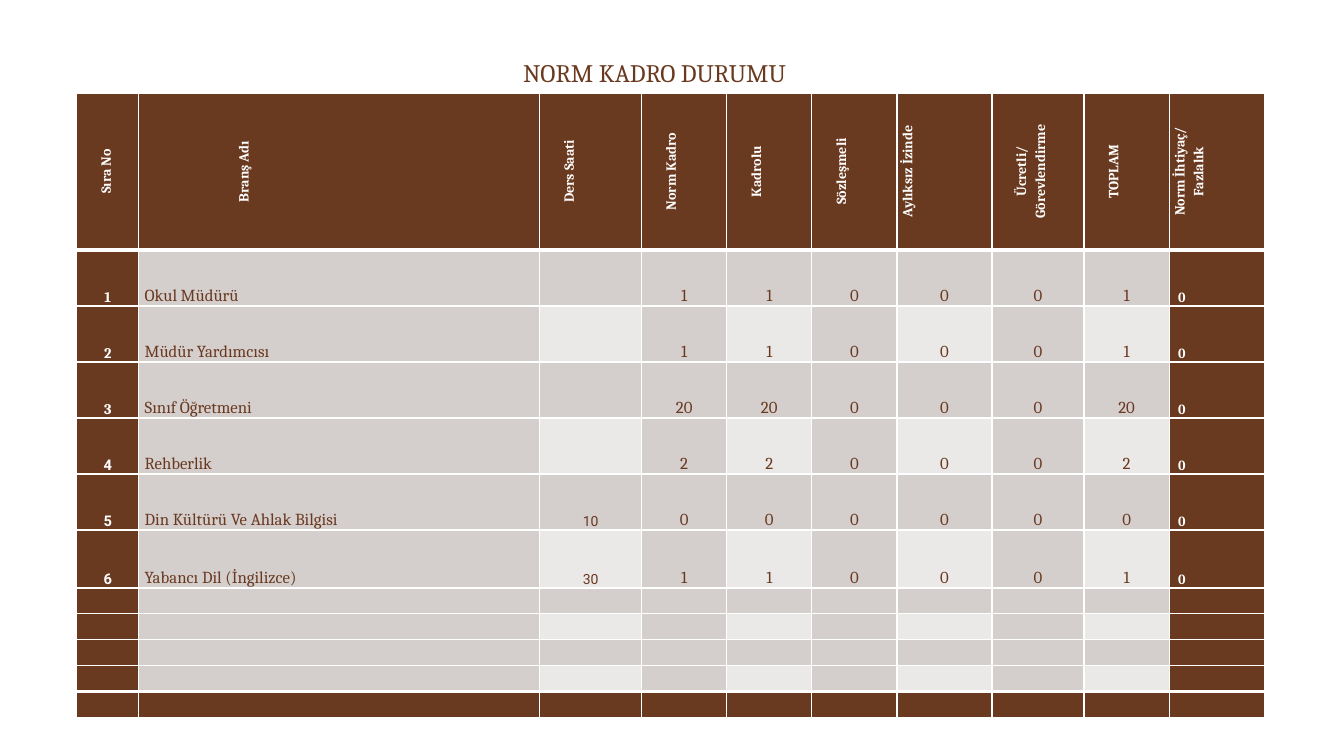
from lxml import etree
from pptx import Presentation
from pptx.dml.color import RGBColor
from pptx.enum.text import MSO_ANCHOR, PP_ALIGN
from pptx.oxml.ns import qn
from pptx.util import Pt

CENTER, LEFT = PP_ALIGN.CENTER, PP_ALIGN.LEFT
MIDDLE, BOTTOM = MSO_ANCHOR.MIDDLE, MSO_ANCHOR.BOTTOM
COLORS = {"brown": "6A3A20", "band": "D4CECD", "light": "EBE8E8", "white": "FFFFFF"}
SERIF, SANS = "Cambria", "Roboto"

COLUMN_WIDTHS = [44.3, 286.4, 72.9, 60.8, 60.8, 60.8, 67.9, 65.8, 60.8, 68.2]
ROW_HEIGHTS = [112.2] + [40] * 5 + [41.4] + [18.5] * 5
LAST_ROW, LAST_COLUMN = len(ROW_HEIGHTS) - 1, len(COLUMN_WIDTHS) - 1
HEADER_LINE = 13.5

# Heading lines and the height of the first line, which sets its distance from the edge
HEADINGS = [
    (["Sıra No"], 27),
    (["Branş Adı"], 81),
    (["Ders Saati"], 27),
    (["Norm Kadro"], 27),
    (["Kadrolu"], 27),
    (["Sözleşmeli"], 27),
    (["Aylıksız İzinde"], HEADER_LINE),
    (["Ücretli/", "Görevlendirme"], 27),
    (["TOPLAM"], 27),
    (["Norm İhtiyaç/", "Fazlalık"], HEADER_LINE),
]
BRANCHES = [
    (1, "Okul Müdürü", "", 1, 1, 0, 0, 0, 1, 0),
    (2, "Müdür Yardımcısı", "", 1, 1, 0, 0, 0, 1, 0),
    (3, "Sınıf Öğretmeni", "", 20, 20, 0, 0, 0, 20, 0),
    (4, "Rehberlik", "", 2, 2, 0, 0, 0, 2, 0),
    (5, "Din Kültürü Ve Ahlak Bilgisi", 10, 0, 0, 0, 0, 0, 0, 0),
    (6, "Yabancı Dil (İngilizce)", 30, 1, 1, 0, 0, 0, 1, 0),
]


def rgb(name):
    return RGBColor.from_string(COLORS[name])


def style(paragraph, size, color, bold=False, face=SERIF, align=LEFT, spacing=1.15):
    paragraph.alignment = align
    paragraph.line_spacing = spacing
    font = paragraph.font
    font.size, font.bold, font.name = Pt(size), bold, face
    font.color.rgb = rgb(color)


def set_borders(cell, row):
    widths = {
        "L": 1,
        "R": 1,
        "T": 3 if row in (1, LAST_ROW) else 1,
        "B": 3 if row in (0, LAST_ROW - 1) else 1,
    }
    properties = cell._tc.get_or_add_tcPr()
    for position, (side, width) in enumerate(widths.items()):
        line = etree.Element(qn(f"a:ln{side}"), w=str(Pt(width)))
        fill = etree.SubElement(line, qn("a:solidFill"))
        etree.SubElement(fill, qn("a:srgbClr"), val=COLORS["white"])
        properties.insert(position, line)


def fill_name(row, column):
    if row in (0, LAST_ROW) or column in (0, LAST_COLUMN):
        return "brown"
    return "light" if row % 2 == 0 and column in (2, 4, 6, 8) else "band"


def write_heading(cell, lines, first_line):
    cell.vertical_anchor = MIDDLE
    cell._tc.get_or_add_tcPr().set("vert", "vert270")
    frame = cell.text_frame
    frame.text = "\n".join(lines)
    for index, paragraph in enumerate(frame.paragraphs):
        height = HEADER_LINE if index else first_line
        style(paragraph, 10, "white", True, align=CENTER, spacing=Pt(height))


def write_value(cell, column, number, value):
    cell.text = str(value)
    paragraph = cell.text_frame.paragraphs[0]
    if value == "":
        etree.SubElement(paragraph._p, qn("a:endParaRPr"), sz="1000")
    elif column == 0:
        style(paragraph, 10.5, "white", True, SANS if number > 3 else SERIF, CENTER)
    elif column == 2:
        style(paragraph, 10, "brown", face=SANS, align=CENTER)
    elif column == LAST_COLUMN:
        cell.margin_left = Pt(6.5)
        style(paragraph, 10, "white", True)
    else:
        style(paragraph, 12, "brown", align=LEFT if column == 1 else CENTER)


def add_title(slide, left, top, width, height):
    title = slide.shapes.add_textbox(Pt(left), Pt(top), Pt(width), Pt(height)).text_frame
    title.word_wrap = True
    title.text = "NORM KADRO DURUMU"
    style(title.paragraphs[0], 18, "brown", spacing=1.0)


def add_staff_table(slide, left, top):
    staff = slide.shapes.add_table(
        len(ROW_HEIGHTS), len(COLUMN_WIDTHS), Pt(left), Pt(top),
        Pt(sum(COLUMN_WIDTHS)), Pt(sum(ROW_HEIGHTS))).table
    staff.first_row = staff.horz_banding = False
    for column, width in zip(staff.columns, COLUMN_WIDTHS):
        column.width = Pt(width)
    for row, height in zip(staff.rows, ROW_HEIGHTS):
        row.height = Pt(height)

    for row in range(len(ROW_HEIGHTS)):
        for column in range(len(COLUMN_WIDTHS)):
            cell = staff.cell(row, column)
            cell.margin_left = cell.margin_right = Pt(4.3)
            cell.margin_top = cell.margin_bottom = 0
            cell.vertical_anchor = BOTTOM
            cell.fill.solid()
            cell.fill.fore_color.rgb = rgb(fill_name(row, column))
            set_borders(cell, row)
            if row == 0:
                write_heading(cell, *HEADINGS[column])
            else:
                filled = row <= len(BRANCHES)
                value = BRANCHES[row - 1][column] if filled else ""
                write_value(cell, column, row, value)


def main():
    presentation = Presentation()
    presentation.slide_width, presentation.slide_height = Pt(960), Pt(540)
    slide = presentation.slides.add_slide(presentation.slide_layouts[6])
    # Staffing table, then its title above
    add_staff_table(slide, 54.8, 66.4)
    add_title(slide, 366.5, 37.4, 510.5, 28.8)
    presentation.save("out.pptx")


if __name__ == "__main__":
    main()
